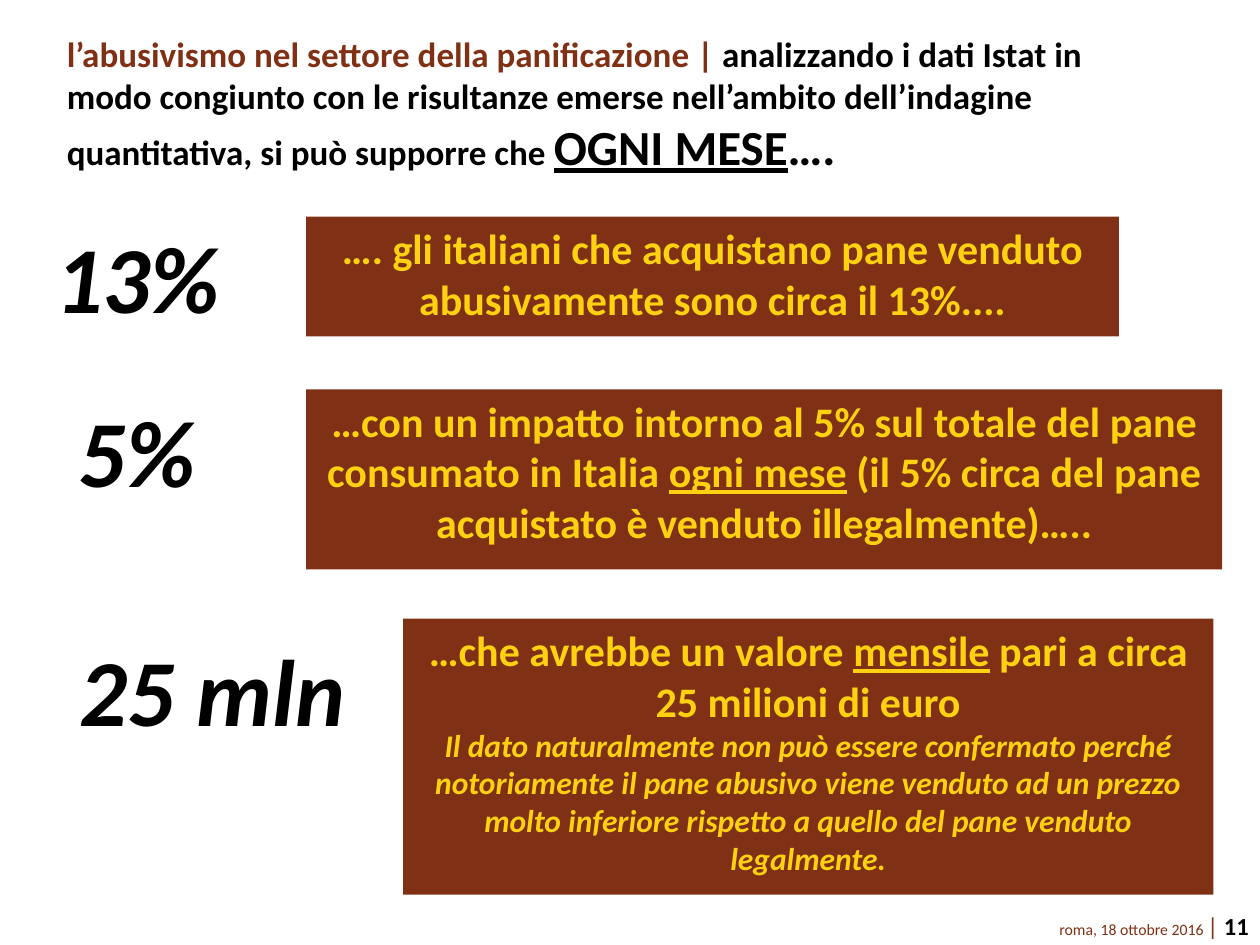
from pptx import Presentation
from pptx.dml.color import RGBColor
from pptx.enum.shapes import MSO_SHAPE
from pptx.enum.text import MSO_ANCHOR, MSO_AUTO_SIZE, PP_ALIGN

LEFT, CENTER, RIGHT = PP_ALIGN.LEFT, PP_ALIGN.CENTER, PP_ALIGN.RIGHT
TOP, MIDDLE = MSO_ANCHOR.TOP, MSO_ANCHOR.MIDDLE
PX = 9144  # 100 px to the inch
PT = 12700


class Theme:
    font = "Calibri"
    brown = RGBColor(0x80, 0x31, 0x15)
    yellow = RGBColor(0xFF, 0xD2, 0x11)
    black = RGBColor(0, 0, 0)
    heading = {"size": 20 * PT, "bold": True, "color": black}
    emphasis = {**heading, "size": 28 * PT}
    figure = {"size": 54 * PT, "bold": True, "italic": True, "color": black}
    claim = {"size": 24 * PT, "bold": True, "color": yellow}
    remark = {"size": 18 * PT, "bold": True, "italic": True, "color": yellow}
    footer = {"size": 9 * PT, "color": brown}
    divider = {**footer, "size": 14 * PT}
    number = {**divider, "bold": True, "color": black}


def underlined(style):
    return {**style, "underline": True}


# Content: each paragraph is a list of (text, style)
HEADING = [[
    ("l’abusivismo nel settore della panificazione | ", {**Theme.heading, "color": Theme.brown}),
    ("analizzando i dati Istat in modo congiunto con le risultanze emerse "
     "nell’ambito dell’indagine quantitativa, si può supporre che ", Theme.heading),
    ("OGNI MESE", underlined(Theme.emphasis)),
    ("….", Theme.emphasis),
]]
FOOTER = [[("roma, 18 ottobre 2016 ", Theme.footer), ("| ", Theme.divider), ("11", Theme.number)]]
# figure, its place, panel place, panel paragraphs
FINDINGS = [
    ("13%", (0, 176, 218, 86), (243, 172, 645, 95), [
        [("…. gli italiani che acquistano pane venduto abusivamente sono circa il 13%....",
          Theme.claim)],
    ]),
    ("5%", (0, 314, 218, 86), (243, 309, 727, 143), [
        [("…con un impatto intorno al 5% sul totale del pane consumato in Italia ", Theme.claim),
         ("ogni mese", underlined(Theme.claim)),
         (" (il 5% circa del pane acquistato è venduto illegalmente)…..", Theme.claim)],
    ]),
    ("25 mln", (43, 495, 252, 103), (320, 491, 643, 219), [
        [("…che avrebbe un valore ", Theme.claim),
         ("mensile", underlined(Theme.claim)),
         (" pari a circa 25 milioni di euro", Theme.claim)],
        [("Il dato naturalmente non può essere confermato perché notoriamente il pane "
          "abusivo viene venduto ad un prezzo molto inferiore rispetto a quello del pane "
          "venduto legalmente.", Theme.remark)],
    ]),
]


def emu(place):
    return [length * PX for length in place]


def write(shape, paragraphs, align, anchor=TOP, margin=5):
    frame = shape.text_frame
    settings = {"word_wrap": True, "auto_size": MSO_AUTO_SIZE.NONE, "vertical_anchor": anchor,
                "margin_left": 10 * PX, "margin_right": 10 * PX,
                "margin_top": margin * PX, "margin_bottom": margin * PX}
    for name, value in settings.items():
        setattr(frame, name, value)
    for index, spans in enumerate(paragraphs):
        para = frame.add_paragraph() if index else frame.paragraphs[0]
        para.alignment = align
        for text, style in spans:
            span = para.add_run()
            span.text = text
            span.font.name = Theme.font
            for name, value in style.items():
                if name == "color":
                    span.font.color.rgb = value
                else:
                    setattr(span.font, name, value)


def main():
    deck = Presentation()
    deck.slide_width, deck.slide_height = emu((1000, 750))
    page = deck.slides.add_slide(deck.slide_layouts[5])
    shapes = page.shapes

    # Heading
    title = shapes.title
    title.left, title.top, title.width, title.height = emu((43, 21, 839, 84))
    write(title, HEADING, LEFT)

    # Large figures beside their panels
    for figure, figure_place, panel_place, paragraphs in FINDINGS:
        box = shapes.add_textbox(*emu(figure_place))
        write(box, [[(figure, Theme.figure)]], CENTER, MIDDLE)
        panel = shapes.add_shape(MSO_SHAPE.RECTANGLE, *emu(panel_place))
        panel.shadow.inherit = False
        panel.fill.solid()
        panel.fill.fore_color.rgb = Theme.brown
        panel.line.fill.background()
        write(panel, paragraphs, CENTER)

    # Footer
    write(shapes.add_textbox(*emu((308, 721, 693, 28))), FOOTER, RIGHT, margin=2)
    deck.save("out.pptx")


if __name__ == "__main__":
    main()
